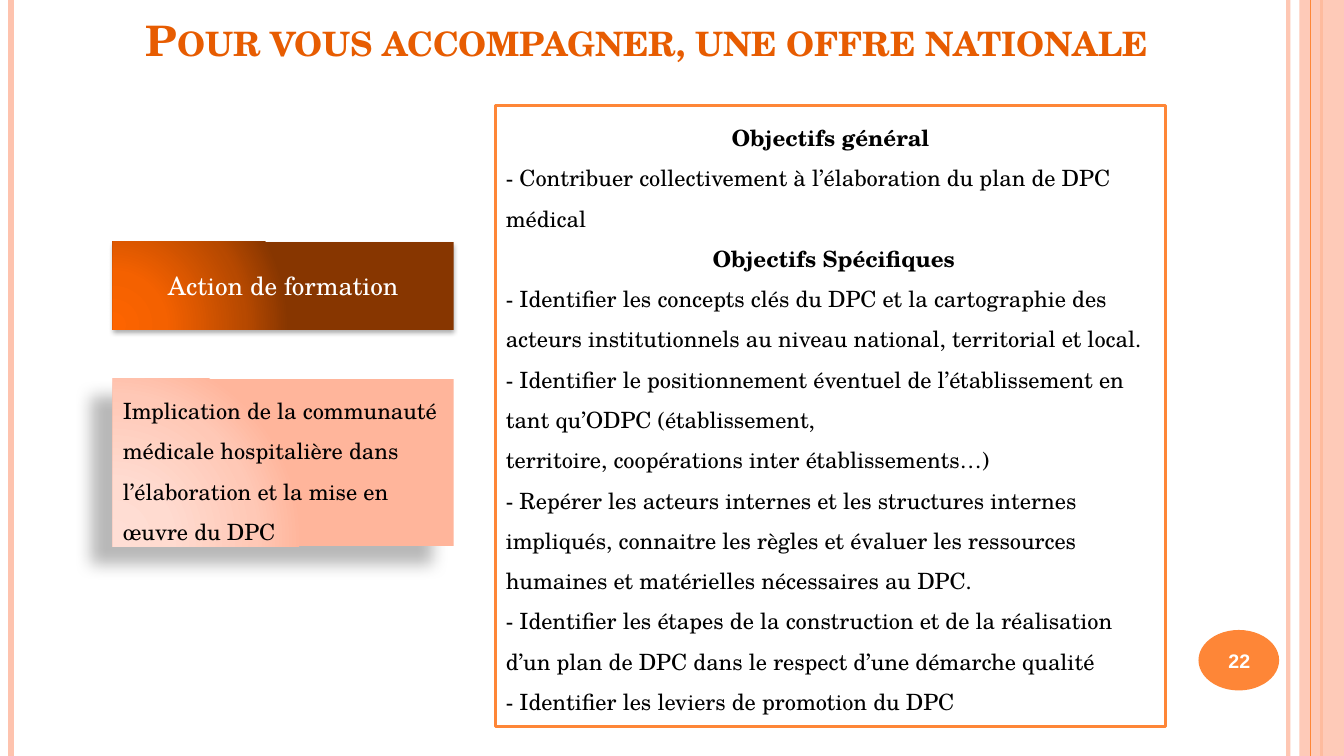
from lxml import etree
from pptx import Presentation
from pptx import util as u
from pptx.dml.color import RGBColor
from pptx.enum import shapes, text
from pptx.oxml.ns import qn

COLORS = {
    "orange": "FE8637", "pink": "FEC3AE", "title": "E75C01",
    "white": "FFFFFF", "black": "000000",
}
SERIF, SANS = "TeX Gyre Schola", "Arial"
WIDTH, HEIGHT = 960, 540

TITLE = "Pour vous accompagner, une offre nationale"
PAGE_NUMBER = "22"
ACTION = "Action de formation"
TOPIC = ("Implication de la communauté médicale hospitalière dans "
         "l’élaboration et la mise en œuvre du DPC")
# (text, is heading)
OBJECTIVES = [
    ("Objectifs général", True),
    ("- Contribuer collectivement à l’élaboration du plan de DPC médical", False),
    (" Objectifs Spécifiques", True),
    ("- Identifier les concepts clés du DPC et la cartographie des acteurs "
     "institutionnels au niveau national, territorial et local.", False),
    ("- Identifier le positionnement éventuel de l’établissement en tant qu’ODPC "
     "(établissement,\vterritoire, coopérations inter établissements…)", False),
    ("- Repérer les acteurs internes et les structures internes impliqués, connaitre "
     "les règles et évaluer les ressources humaines et matérielles nécessaires au DPC.", False),
    ("- Identifier les étapes de la construction et de la réalisation d’un plan de DPC "
     "dans le respect d’une démarche qualité", False),
    ("- Identifier les leviers de promotion du DPC", False),
]

# x, colour, width, opacity in percent
STRIPES_BEHIND = [(920.16, "pink", 3, 93), (7.92, "pink", 4.5, 100), (943.92, "orange", 1.5, 100)]
STRIPE_FRONT = (936, "orange", 0.75, 100)

# position in percent, colour
ACTION_GRADIENT = [(0, "FD6400"), (30, "F46100"), (75, "B74900"), (100, "873600")]
TOPIC_GRADIENT = [(0, "FFDED5"), (30, "FFDBD0"), (75, "FFC8B6"), (100, "FFB59B")]
GRADIENT_FOCUS = {"l": 5, "t": 100, "r": 120, "b": 10}
# opacity in percent, blur, distance, angle
ACTION_SHADOW = (32, 3.5, 2.2, 90)
TOPIC_SHADOW = (28, 11.8, 19.7, 141)

CENTER, LEFT = text.PP_ALIGN.CENTER, text.PP_ALIGN.LEFT
MIDDLE, TOP, BOTTOM = text.MSO_ANCHOR.MIDDLE, text.MSO_ANCHOR.TOP, text.MSO_ANCHOR.BOTTOM


def rgb(name):
    return RGBColor.from_string(COLORS[name])


def add_xml(parent, tag, **attributes):
    values = {key: str(value) for key, value in attributes.items()}
    return etree.SubElement(parent, qn(tag), values)


def set_opacity(element, percent):
    if percent < 100:
        color = next(element.iter(qn("a:srgbClr")))
        add_xml(color, "a:alpha", val=percent * 1000)


def add_stripe(page, x, color, width, opacity):
    line = page.shapes.add_connector(
        shapes.MSO_CONNECTOR.STRAIGHT, u.Pt(x), 0, u.Pt(x), u.Pt(HEIGHT))
    line.line.color.rgb = rgb(color)
    line.line.width = u.Pt(width)
    properties = line._element.spPr
    set_opacity(properties, opacity)
    add_xml(properties, "a:effectLst")


def add_shape(page, kind, at, fill=None, line=None):
    shape = page.shapes.add_shape(kind, *map(u.Pt, at))
    shape.shadow.inherit = False
    if fill:
        shape.fill.solid()
        shape.fill.fore_color.rgb = rgb(fill)
    if line:
        shape.line.color.rgb = rgb(line)
        shape.line.width = u.Pt(2)
    else:
        shape.line.fill.background()
    return shape


def add_glow(shape, stops, shadow):
    """Give a shape a circular gradient and an outer shadow."""
    properties = shape._element.spPr
    gradient = etree.Element(qn("a:gradFill"), rotWithShape="1")
    stop_list = add_xml(gradient, "a:gsLst")
    for position, color in stops:
        stop = add_xml(stop_list, "a:gs", pos=position * 1000)
        add_xml(stop, "a:srgbClr", val=color)
    path = add_xml(gradient, "a:path", path="circle")
    add_xml(path, "a:fillToRect", **{side: n * 1000 for side, n in GRADIENT_FOCUS.items()})
    properties.find(qn("a:ln")).addprevious(gradient)

    opacity, blur, distance, angle = shadow
    outer = add_xml(properties.find(qn("a:effectLst")), "a:outerShdw",
                    blurRad=u.Pt(blur), dist=u.Pt(distance), dir=angle * 60000,
                    algn="ctr", rotWithShape=0)
    add_xml(outer, "a:srgbClr", val=COLORS["black"])
    set_opacity(outer, opacity)


def write(shape, lines, size, color, anchor, font=SERIF, spacing=None, grow=False):
    """Fill a shape with (text, alignment, bold) paragraphs."""
    frame = shape.text_frame
    frame.word_wrap = True
    frame.vertical_anchor = anchor
    if grow:
        frame.auto_size = text.MSO_AUTO_SIZE.SHAPE_TO_FIT_TEXT
    for index, (words, align, bold) in enumerate(lines):
        para = frame.add_paragraph() if index else frame.paragraphs[0]
        para.text = words
        para.alignment = align
        if spacing:
            para.line_spacing = spacing
        para.font.name = font
        para.font.size = u.Pt(size)
        para.font.bold = bold
        para.font.color.rgb = rgb(color)


def add_text(page, at, *args, **options):
    box = page.shapes.add_textbox(*map(u.Pt, at))
    write(box, *args, **options)
    return box


def main():
    deck = Presentation()
    deck.slide_width, deck.slide_height = u.Pt(WIDTH), u.Pt(HEIGHT)
    page = deck.slides.add_slide(deck.slide_layouts[6])
    rectangle, ellipse = shapes.MSO_SHAPE.RECTANGLE, shapes.MSO_SHAPE.OVAL

    for stripe in STRIPES_BEHIND:
        add_stripe(page, *stripe)
    band = add_shape(page, rectangle, (928.08, 0, WIDTH - 928.08, HEIGHT), "pink")
    set_opacity(band._element.spPr, 87)
    add_stripe(page, *STRIPE_FRONT)

    add_shape(page, ellipse, (856.08, 450, 57.6, 43.2), "orange")
    add_text(page, (853.2, 451.44, 64.08, 41.04), [(PAGE_NUMBER, CENTER, True)],
             14, "white", MIDDLE, font=SANS)

    action = add_shape(page, rectangle, (80.64, 172.8, 243.36, 62.64))
    add_glow(action, ACTION_GRADIENT, ACTION_SHADOW)
    write(action, [(ACTION, CENTER, False)], 18, "white", MIDDLE)

    topic = add_shape(page, rectangle, (80.64, 270.72, 243.36, 119.52))
    add_glow(topic, TOPIC_GRADIENT, TOPIC_SHADOW)
    write(topic, [(TOPIC, LEFT, False)], 16, "black", TOP, spacing=1.5, grow=True)

    title = add_text(page, (69.84, 8.64, 784.08, 41.04), [(TITLE, CENTER, True)],
                     30, "title", BOTTOM)
    span = title.text_frame.paragraphs[0].runs[0]
    span._r.get_or_add_rPr().set("cap", "small")

    objectives = add_shape(page, rectangle, (354.24, 75.6, 478.08, 443.52), "white", "orange")
    lines = [(words, CENTER if heading else LEFT, heading) for words, heading in OBJECTIVES]
    write(objectives, lines, 16, "black", TOP, spacing=1.5, grow=True)

    deck.save("out.pptx")


if __name__ == "__main__":
    main()
